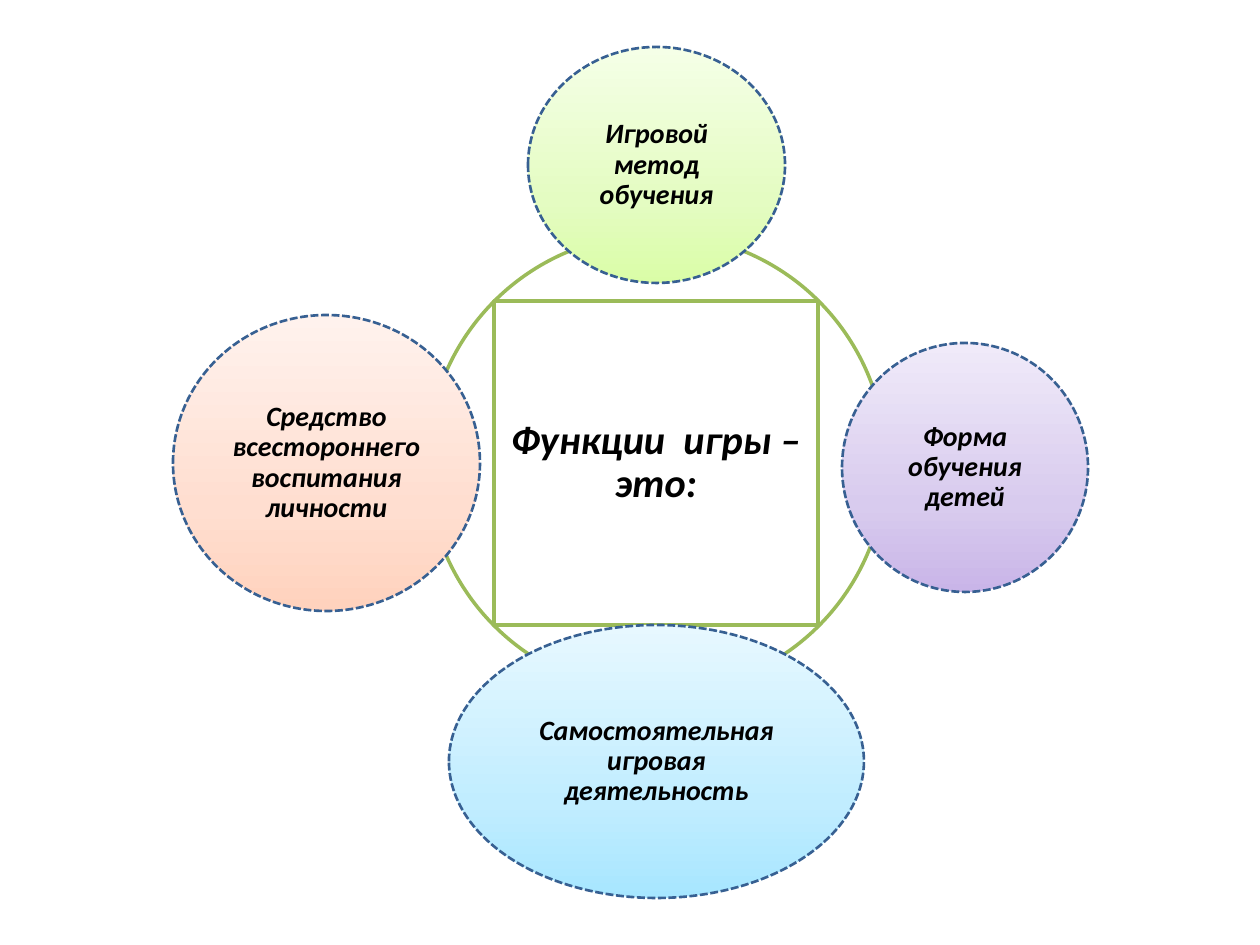
from copy import deepcopy

from pptx import Presentation
from pptx.dml.color import RGBColor
from pptx.enum import dml, shapes, text
from pptx.util import Emu, Pt

EMU_PER_PX = 914400 / 126


def px(length):
    return Emu(round(length * EMU_PER_PX))


def colour(value):
    return RGBColor.from_string(value)


class Diagram:
    """Holds the style and the current slide of a radial diagram."""

    font = "Calibri"
    ink = "000000"
    paper = "FFFFFF"
    frame_line = "9BBB59"
    bubble_line = "376092"

    def __init__(self, page):
        self.page = page

    def outline(self, kind, bounds, line, width):
        box = self.page.shapes.add_shape(kind, *map(px, bounds))
        box.shadow.inherit = False
        box.line.color.rgb = colour(line)
        box.line.width = Pt(width)
        return box

    def frame(self, kind, bounds):
        box = self.outline(kind, bounds, self.frame_line, 2)
        box.fill.solid()
        box.fill.fore_color.rgb = colour(self.paper)
        return box

    def label(self, box, words, size, inset):
        frame = box.text_frame
        frame.text = words
        frame.word_wrap = True
        frame.vertical_anchor = text.MSO_ANCHOR.MIDDLE
        frame.margin_left = frame.margin_right = px(inset)
        frame.margin_top = frame.margin_bottom = px(inset)
        para = frame.paragraphs[0]
        para.alignment = text.PP_ALIGN.CENTER
        para.line_spacing = 0.9
        for span in para.runs:
            span.font.name = self.font
            span.font.size = Pt(size)
            span.font.bold = span.font.italic = True
            span.font.color.rgb = colour(self.ink)

    def gradient(self, box, shades):
        box.fill.gradient()
        box.fill.gradient_angle = 90
        stop_list = box.fill._fill._gradFill.gsLst
        stop_list.insert(1, deepcopy(stop_list[0]))
        for stop, place, shade in zip(box.fill.gradient_stops, (0, 0.35, 1), shades):
            stop.position = place
            stop.color.rgb = colour(shade)

    def bubble(self, words, bounds, shades):
        box = self.outline(shapes.MSO_SHAPE.OVAL, bounds, self.bubble_line, 1.5)
        box.line.dash_style = dml.MSO_LINE.SQUARE_DOT
        self.gradient(box, shades)
        self.label(box, words, 16, 3)


BUBBLES = [
    ("Игровой метод обучения", (528, 47, 257, 236), ("DAFDA7", "E4FCC2", "F5FFE7")),
    ("Форма обучения детей", (842, 343, 246, 249), ("C9B5E8", "D8CBEE", "F0EAF9")),
    ("Самостоятельная игровая деятельность", (449, 625, 415, 273),
     ("A7E6FF", "C1EDFF", "E7F8FF")),
    ("Средство всестороннего воспитания личности", (173, 315, 307, 296),
     ("FFD2BD", "FFDED0", "FFF2ED")),
]


def main():
    deck = Presentation()
    deck.slide_width, deck.slide_height = px(1260), px(945)
    diagram = Diagram(deck.slides.add_slide(deck.slide_layouts[6]))
    diagram.frame(shapes.MSO_SHAPE.OVAL, (427, 234, 459, 459))
    centre = diagram.frame(shapes.MSO_SHAPE.RECTANGLE, (494, 301, 324, 324))
    diagram.label(centre, "Функции  игры – это:", 23, 4)
    for words, bounds, shades in BUBBLES:
        diagram.bubble(words, bounds, shades)
    deck.save("out.pptx")


if __name__ == "__main__":
    main()
